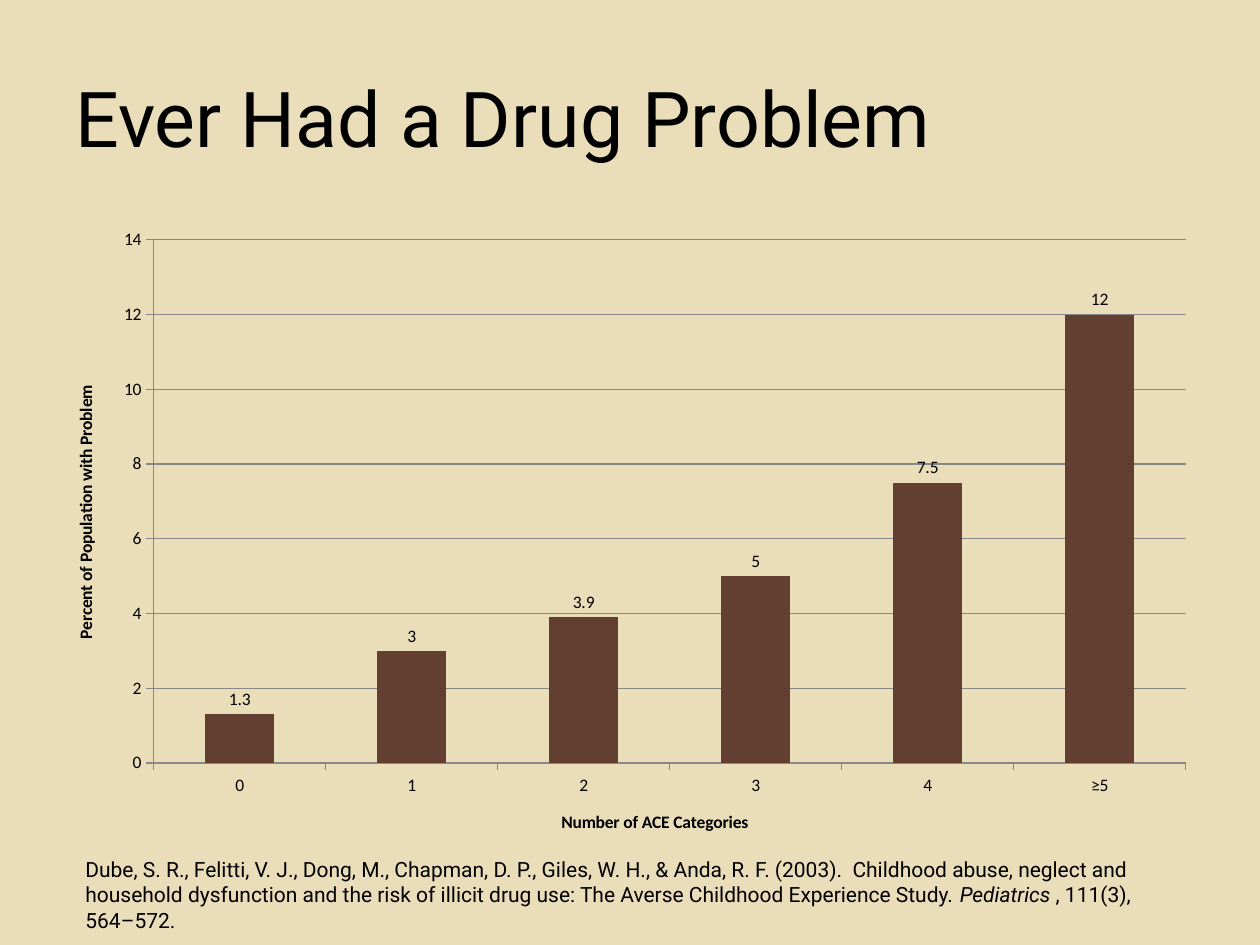
from lxml import etree
from pptx import Presentation
from pptx.chart.data import CategoryChartData
from pptx.dml.color import RGBColor
from pptx.enum.chart import XL_CHART_TYPE as ChartType, XL_LABEL_POSITION as LabelPos
from pptx.enum.chart import XL_TICK_MARK as Tick
from pptx.enum.text import MSO_ANCHOR as Anchor
from pptx.oxml.ns import qn
from pptx.util import Pt

COLORS = {"bg": "EADDBA", "text": "000000", "bar": "633F32", "line": "878787"}


def add_run(p, text, size=12, italic=False):
    r = p.add_run()
    r.text = text
    r.font.name = "Roboto"
    r.font.size = Pt(size)
    r.font.italic = italic
    r.font.color.rgb = RGBColor.from_string(COLORS["text"])


prs = Presentation()
prs.slide_width, prs.slide_height = Pt(720), Pt(540)
s = prs.slides.add_slide(prs.slide_layouts[6])
s.background.fill.solid()
s.background.fill.fore_color.rgb = RGBColor.from_string(COLORS["bg"])

title = s.shapes.add_textbox(Pt(36), Pt(21.6), Pt(648), Pt(90))
tf = title.text_frame
tf.word_wrap = True
tf.vertical_anchor = Anchor.MIDDLE
add_run(tf.paragraphs[0], "Ever Had a Drug Problem", size=44)

data = CategoryChartData()
data.categories = ["0", "1", "2", "3", "4", "≥5"]
data.add_series("Series 1", [1.3, 3, 3.9, 5, 7.5, 12])
chart = s.shapes.add_chart(
    ChartType.COLUMN_CLUSTERED, Pt(36), Pt(126), Pt(648), Pt(356.4), data
).chart
chart.has_title = False
chart.has_legend = False
chart.font.name = "Calibri"
chart.font.size = Pt(10)
chart.font.color.rgb = RGBColor.from_string(COLORS["text"])

plot = chart.plots[0]
plot.gap_width = 150
plot.vary_by_categories = False
plot.has_data_labels = True
plot.data_labels.show_value = True
plot.data_labels.position = LabelPos.OUTSIDE_END
fill = plot.series[0].format.fill
fill.solid()
fill.fore_color.rgb = RGBColor.from_string(COLORS["bar"])

value_axis = chart.value_axis
value_axis.minimum_scale, value_axis.maximum_scale = 0, 14
value_axis.major_unit = 2
value_axis.has_major_gridlines = True
axis_titles = [
    (chart.category_axis, "Number of ACE Categories"),
    (value_axis, "Percent of Population with Problem"),
]
for axis, text in axis_titles:
    axis.major_tick_mark = Tick.OUTSIDE
    axis.minor_tick_mark = Tick.NONE
    axis.format.line.color.rgb = RGBColor.from_string(COLORS["line"])
    axis.format.line.width = Pt(0.75)
    p = axis.axis_title.text_frame.paragraphs[0]
    r = p.add_run()
    r.text = text
    r.font.name = "Calibri"
    r.font.size = Pt(10)
    r.font.bold = True
    r.font.color.rgb = RGBColor.from_string(COLORS["text"])
grid = value_axis.major_gridlines.format.line
grid.color.rgb = RGBColor.from_string(COLORS["line"])
grid.width = Pt(0.75)

plot_area = chart.element.find(".//" + qn("c:plotArea"))
for old in plot_area.findall(qn("c:layout")):
    plot_area.remove(old)
layout = etree.Element(qn("c:layout"))
plot_area.insert(0, layout)
manual = etree.SubElement(layout, qn("c:manualLayout"))
settings = [
    ("layoutTarget", "inner"), ("xMode", "edge"), ("yMode", "edge"),
    ("x", "0.08"), ("y", "0.031"), ("w", "0.91"), ("h", "0.839"),
]
for tag, val in settings:
    etree.SubElement(manual, qn("c:" + tag)).set("val", val)

citation = s.shapes.add_textbox(Pt(41.76), Pt(486), Pt(635.76), Pt(51.12))
tf = citation.text_frame
tf.word_wrap = True
p = tf.paragraphs[0]
add_run(p, "Dube, S. R., Felitti, V. J., Dong, M., Chapman, D. P., Giles, W. H., & Anda, R. F. (2003).  "
           "Childhood abuse, neglect and household dysfunction and the risk of illicit drug use: "
           "The Averse Childhood Experience Study. ")
add_run(p, "Pediatrics ", italic=True)
add_run(p, ", 111(3), 564–572.")

prs.save("out.pptx")
